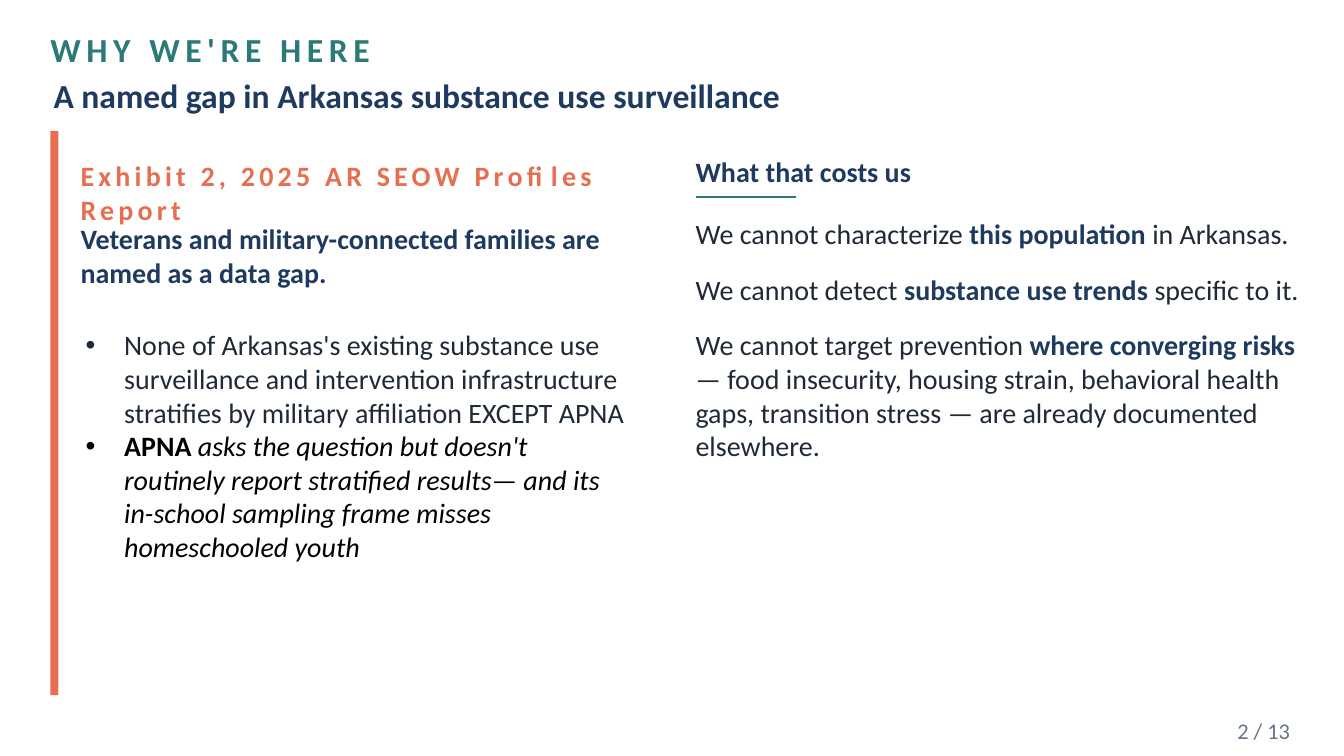
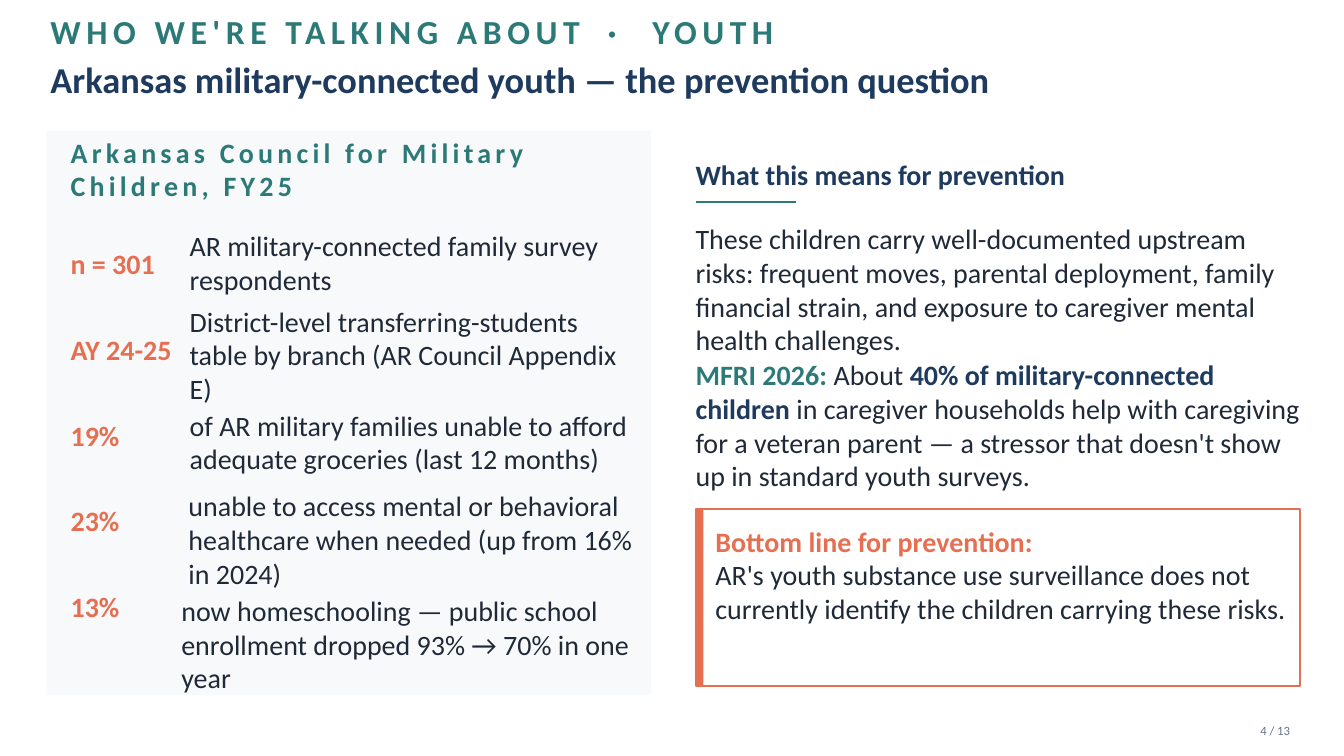
from lxml.etree import SubElement
from pptx import Presentation
from pptx.dml.color import RGBColor
from pptx.enum.shapes import MSO_CONNECTOR, MSO_SHAPE
from pptx.enum.text import MSO_ANCHOR, PP_ALIGN
from pptx.oxml.ns import qn
from pptx.util import Cm, Pt

FONT = "Calibri"
TEAL, NAVY, CORAL = "2B7A78", "1E3A5F", "E76F51"
INK, SLATE, BLACK = "1F2937", "64748B", "000000"
PANEL, WHITE = "F8F9FA", "FFFFFF"

BODY_TOP, BODY_HEIGHT, ACCENT_WIDTH = 3.3, 14.22, 0.2
RIGHT_LEFT, COLUMN_WIDTH = 17.53, 15.24
INDENT = 0.97

STRONG = {"color": NAVY, "bold": True}
CORAL_BOLD = {"color": CORAL, "bold": True}

EXHIBIT = "Exhibit 2, 2025 AR SEOW Profiles Report"
GAP = "Veterans and military-connected families are named as a data gap."
GAP_DETAILS = [
    ["None of Arkansas's existing substance use surveillance and intervention "
     "infrastructure stratifies by military affiliation EXCEPT APNA"],
    [("APNA ", {"color": BLACK, "bold": True}),
     ("asks the question but doesn't routinely report stratified results— and its "
      "in-school sampling frame misses homeschooled youth",
      {"color": BLACK, "italic": True})],
]
COSTS = [
    ["We cannot characterize ", ("this population", STRONG), " in Arkansas."],
    ["We cannot detect ", ("substance use trends", STRONG), " specific to it."],
    ["We cannot target prevention ", ("where converging risks", STRONG),
     " — food insecurity, housing strain, behavioral health gaps, transition stress "
     "— are already documented elsewhere."],
]

COUNCIL = "Arkansas Council for Military Children, FY25"
FINDINGS = [
    ("n = 301", "AR military-connected family survey respondents", 4.78, 5.77),
    ("AY 24-25", "District-level transferring-students table by branch "
     "(AR Council Appendix E)", 4.78, 7.67),
    ("19%", "of AR military families unable to afford adequate groceries "
     "(last 12 months)", 4.78, 10.29),
    ("23%", "unable to access mental or behavioral healthcare when needed "
     "(up from 16% in 2024)", 4.75, 12.32),
    ("13%", "now homeschooling — public school enrollment dropped 93% → 70% "
     "in one year", 4.57, 14.96),
]
RISKS = ("These children carry well-documented upstream risks: frequent moves, parental "
         "deployment, family financial strain, and exposure to caregiver mental health "
         "challenges.")
CAREGIVING = [
    ("MFRI 2026: ", {"color": TEAL, "bold": True}), "About ",
    ("40% of military-connected children", STRONG),
    " in caregiver households help with caregiving for a veteran parent — a stressor "
    "that doesn't show up in standard youth surveys.",
]
BOTTOM_LINE = [
    [("Bottom line for prevention:", CORAL_BOLD)],
    ["AR's youth substance use surveillance does not currently identify the children "
     "carrying these risks."],
]


def rgb(value):
    return RGBColor.from_string(value)


def style_font(font, color=None, bold=None, italic=None):
    if color:
        font.color.rgb = rgb(color)
    if bold is not None:
        font.bold = bold
    if italic is not None:
        font.italic = italic


def add_bullet(paragraph):
    properties = paragraph._p.get_or_add_pPr()
    properties.set("marL", str(Cm(INDENT)))
    properties.set("indent", str(-Cm(INDENT)))
    SubElement(properties, qn("a:buFont")).set("typeface", "Arial")
    SubElement(properties, qn("a:buChar")).set("char", "•")


def fill_paragraph(paragraph, segments, size, color, bold, tracking):
    if len(segments) == 1 and isinstance(segments[0], tuple):
        text, look = segments[0]
        segments = [text]
        color, bold = look["color"], look["bold"]
    paragraph.font.name = FONT
    paragraph.font.size = Pt(size)
    style_font(paragraph.font, color, bold)
    if tracking:
        defaults = paragraph._p.get_or_add_pPr().find(qn("a:defRPr"))
        defaults.set("spc", str(tracking * 100))
    for segment in segments:
        text, look = segment if isinstance(segment, tuple) else (segment, {})
        run = paragraph.add_run()
        run.text = text
        style_font(run.font, look.get("color"), look.get("bold"), look.get("italic"))
        if "tracking" in look:
            run._r.get_or_add_rPr().set("spc", str(look["tracking"] * 100))


def add_text(slide, place, paragraphs, size=20, color=INK, bold=False, tracking=0,
             middle=False, right=False, bullets=False):
    frame = slide.shapes.add_textbox(*map(Cm, place)).text_frame
    frame.word_wrap = True
    frame.margin_left = frame.margin_right = frame.margin_top = frame.margin_bottom = 0
    frame.vertical_anchor = MSO_ANCHOR.MIDDLE if middle else MSO_ANCHOR.TOP
    if isinstance(paragraphs, str):
        paragraphs = [[paragraphs]]
    for index, segments in enumerate(paragraphs):
        paragraph = frame.add_paragraph() if index else frame.paragraphs[0]
        if right:
            paragraph.alignment = PP_ALIGN.RIGHT
        if bullets:
            add_bullet(paragraph)
        fill_paragraph(paragraph, segments, size, color, bold, tracking)


def add_rectangle(slide, place, fill, outline=None):
    rectangle = slide.shapes.add_shape(MSO_SHAPE.RECTANGLE, *map(Cm, place))
    rectangle.shadow.inherit = False
    rectangle.fill.solid()
    rectangle.fill.fore_color.rgb = rgb(fill)
    if outline:
        rectangle.line.color.rgb = rgb(outline)
        rectangle.line.width = Pt(1.5)
    else:
        rectangle.line.fill.background()


def add_right_heading(slide, heading, height):
    add_text(slide, (RIGHT_LEFT, 3.81, COLUMN_WIDTH, height), heading,
             color=NAVY, bold=True, middle=True)
    rule_top = 3.81 + height + 0.13
    rule = slide.shapes.add_connector(
        MSO_CONNECTOR.STRAIGHT, Cm(RIGHT_LEFT), Cm(rule_top),
        Cm(RIGHT_LEFT + 2.54), Cm(rule_top))
    rule.line.color.rgb = rgb(TEAL)
    rule.line.width = Pt(1.5)
    SubElement(rule._element.spPr, qn("a:effectLst"))


def start_slide(deck, kicker, kicker_height, title, title_left, title_top, title_size,
                page, page_size):
    slide = deck.slides.add_slide(deck.slide_layouts[6])
    add_text(slide, (1.27, 0.46, 30.48, kicker_height), kicker, 24, TEAL, True,
             tracking=4, middle=True)
    add_text(slide, (title_left, title_top, 31.24, 1.52), title, title_size, NAVY, True,
             middle=True)
    add_text(slide, (29.21, 18.03, 3.3, 0.76), page, page_size, SLATE,
             middle=True, right=True)
    return slide


def build_gap_slide(deck):
    slide = start_slide(deck, "WHY WE'RE HERE", 1.57,
                        "A named gap in Arkansas substance use surveillance",
                        1.35, 1.63, 24, "2 / 13", 16)
    add_rectangle(slide, (1.27, BODY_TOP, ACCENT_WIDTH, BODY_HEIGHT), CORAL)
    add_text(slide, (2.03, 4.34, 13.72, 1.02), EXHIBIT, color=CORAL, bold=True,
             tracking=3, middle=True)
    add_text(slide, (2.03, 5.59, 13.72, 2.29), GAP, color=NAVY, bold=True)
    add_text(slide, (2.16, 8.26, 13.72, 7.77), GAP_DETAILS, bullets=True)
    add_right_heading(slide, "What that costs us", 1.02)
    for index, cost in enumerate(COSTS):
        height = 3.56 if index == len(COSTS) - 1 else 1.27
        add_text(slide, (RIGHT_LEFT, 5.46 + 1.4 * index, COLUMN_WIDTH, height), [cost])


def build_youth_slide(deck):
    kicker = [["WHO WE'RE TALKING ABOUT", (" · ", {"tracking": 10}), "YOUTH"]]
    slide = start_slide(deck, kicker, 0.64,
                        "Arkansas military-connected youth — the prevention question",
                        1.27, 1.24, 26, "4 / 13", 9)
    add_rectangle(slide, (1.17, BODY_TOP, COLUMN_WIDTH, BODY_HEIGHT), PANEL)
    add_text(slide, (1.78, 3.81, 14.22, 0.89), COUNCIL, color=TEAL, bold=True,
             tracking=3, middle=True)
    for index, (figure, meaning, left, top) in enumerate(FINDINGS):
        add_text(slide, (1.78, 6.22 + 2.16 * index, 3.3, 1.27), figure,
                 color=CORAL, bold=True)
        add_text(slide, (left, top, 16.03 - left, 2.16), meaning)
    add_right_heading(slide, "What this means for prevention", 1.14)
    add_text(slide, (RIGHT_LEFT, 5.59, COLUMN_WIDTH, 3.05), RISKS)
    add_text(slide, (RIGHT_LEFT, 9.02, COLUMN_WIDTH, 3.3), [CAREGIVING])
    add_rectangle(slide, (RIGHT_LEFT, 12.83, COLUMN_WIDTH, 4.45), WHITE, CORAL)
    add_rectangle(slide, (RIGHT_LEFT, 12.83, ACCENT_WIDTH, 4.45), CORAL)
    add_text(slide, (18.03, 13.21, 14.48, 3.81), BOTTOM_LINE)


def main():
    deck = Presentation()
    deck.slide_width, deck.slide_height = Cm(33.87), Cm(19.05)
    build_gap_slide(deck)
    build_youth_slide(deck)
    deck.save("out.pptx")


if __name__ == "__main__":
    main()
